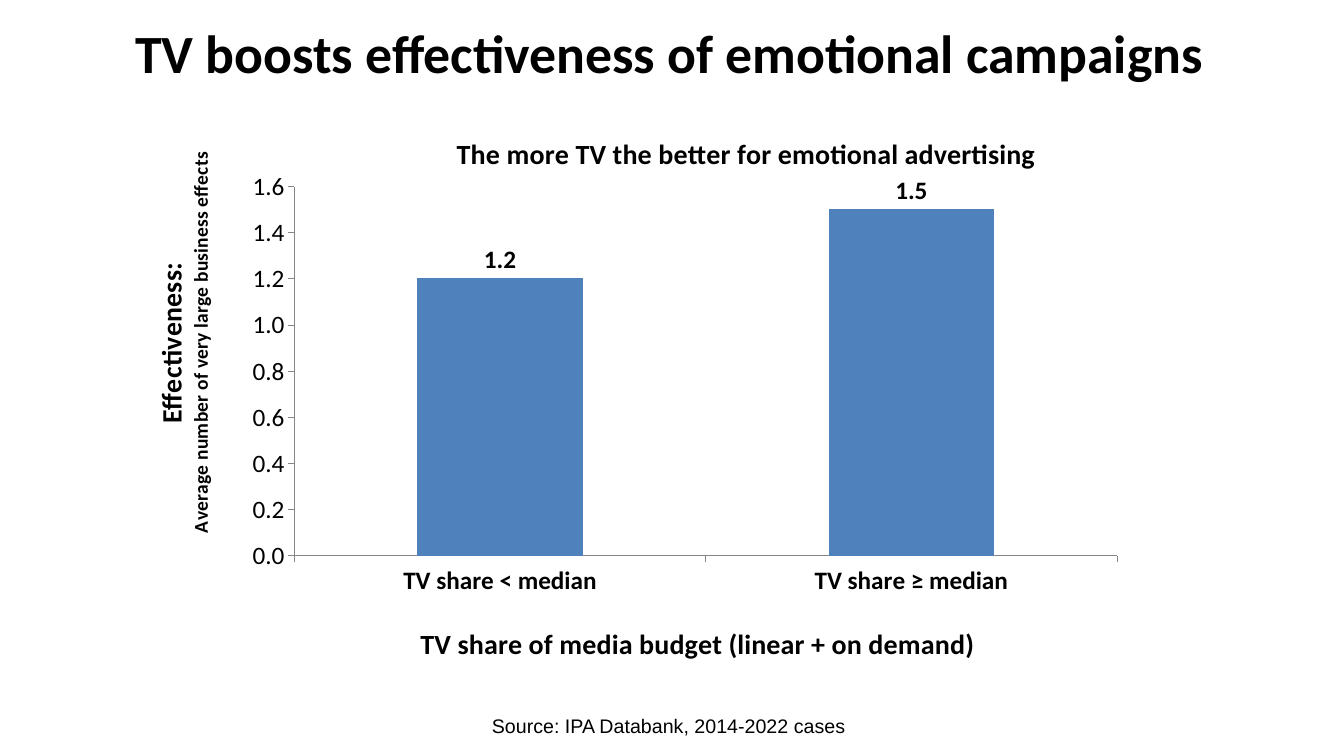
from lxml import etree
from pptx import Presentation, util as u
from pptx.chart.data import CategoryChartData
from pptx.dml.color import RGBColor
from pptx.enum import chart as ch, text as tx
from pptx.oxml.ns import qn


def color(hex_value):
    return RGBColor.from_string(hex_value)


def place(parent, index, **fractions):
    """Give a chart part a manual layout, in fractions of the chart."""
    for old in parent.findall(qn("c:layout")):
        parent.remove(old)
    layout = etree.Element(qn("c:layout"))
    manual = etree.SubElement(layout, qn("c:manualLayout"))
    if "w" in fractions:
        etree.SubElement(manual, qn("c:layoutTarget"), val="inner")
    for key in ("x", "y"):
        etree.SubElement(manual, qn(f"c:{key}Mode"), val="edge")
    for key, value in fractions.items():
        etree.SubElement(manual, qn(f"c:{key}"), val=str(value))
    parent.insert(index, layout)


class Deck:
    ink, bar, axis = "000000", "4F81BD", "868686"
    font = "Calibri"

    def __init__(self):
        self.prs = Presentation()
        self.prs.slide_width, self.prs.slide_height = u.Inches(13.33), u.Inches(7.5)
        self.slide = self.prs.slides.add_slide(self.prs.slide_layouts[6])

    def style(self, font, size, bold=False, name=None):
        font.name, font.size, font.bold = name or self.font, u.Pt(size), bold
        font.color.rgb = color(self.ink)

    def text(self, words, box, size, bold=False, name=None, wrap=True,
             align=tx.PP_ALIGN.LEFT, anchor=tx.MSO_ANCHOR.TOP):
        frame = self.slide.shapes.add_textbox(*map(u.Inches, box)).text_frame
        frame.word_wrap, frame.vertical_anchor = wrap, anchor
        paragraph = frame.paragraphs[0]
        paragraph.text, paragraph.alignment = words, align
        self.style(paragraph.font, size, bold, name)

    def chart_title(self, title, lines, x, y, turned=False):
        frame = title.text_frame
        for i, (words, size) in enumerate(lines):
            paragraph = frame.add_paragraph() if i else frame.paragraphs[0]
            paragraph.text = words
            self.style(paragraph.font, size, True)
        element = title._element
        if turned:
            body = element.find(".//" + qn("a:bodyPr"))
            body.set("rot", "-5400000")
            body.set("vert", "horz")
        place(element, 1, x=x, y=y)

    def columns(self, series_name, values, box, plot_area):
        data = CategoryChartData(number_format="0.0")
        data.categories = list(values)
        data.add_series(series_name, values.values())
        chart = self.slide.shapes.add_chart(
            ch.XL_CHART_TYPE.COLUMN_CLUSTERED, *map(u.Inches, box), data).chart
        self.style(chart.font, 18)
        chart.has_legend = False
        place(chart._chartSpace.find(".//" + qn("c:plotArea")), 0, **plot_area)

        # Columns and their labels
        plot = chart.plots[0]
        plot.gap_width, plot.vary_by_categories = 150, False
        series = plot.series[0]
        series.format.fill.solid()
        series.format.fill.fore_color.rgb = color(self.bar)
        series.format.line.color.rgb = color(self.bar)
        series.format.line.width = u.Pt(0.75)
        labels = series.data_labels
        labels.show_value = True
        labels.position = ch.XL_LABEL_POSITION.OUTSIDE_END
        labels.number_format, labels.number_format_is_linked = "0.0", False
        self.style(labels.font, 18, True)

        # Axes
        for axis, bold in ((chart.category_axis, True), (chart.value_axis, False)):
            axis.has_major_gridlines = False
            axis.major_tick_mark = ch.XL_TICK_MARK.OUTSIDE
            axis.minor_tick_mark = ch.XL_TICK_MARK.NONE
            axis.format.line.color.rgb = color(self.axis)
            axis.format.line.width = u.Pt(0.75)
            self.style(axis.tick_labels.font, 18, bold)
        scale = chart.value_axis
        scale.minimum_scale, scale.maximum_scale, scale.major_unit = 0, 1.6, 0.2
        scale.tick_labels.number_format = "0.0"
        scale.tick_labels.number_format_is_linked = False
        return chart


def main():
    deck = Deck()

    # Headline
    deck.text("TV boosts effectiveness of emotional campaigns", (0.64, 0, 12, 1.03),
              38.4, bold=True, align=tx.PP_ALIGN.CENTER, anchor=tx.MSO_ANCHOR.MIDDLE)

    # Effectiveness by TV share
    effectiveness = deck.columns(
        "Series 1", {"TV share < median": 1.2, "TV share ≥ median": 1.5},
        (0.64, 0.88, 12, 5.77), dict(x=0.19, y=0.17, w=0.68, h=0.64))
    deck.chart_title(effectiveness.chart_title,
                     [("The more TV the better for emotional advertising", 20)], 0.32, 0.07)
    deck.chart_title(effectiveness.category_axis.axis_title,
                     [("TV share of media budget (linear + on demand)", 20)], 0.29, 0.92)
    deck.chart_title(effectiveness.value_axis.axis_title,
                     [("Effectiveness:", 20),
                      ("Average number of very large business effects", 14)],
                     0.07, 0.11, turned=True)

    # Source line
    deck.text("Source: IPA Databank, 2014-2022 cases", (4.78, 7.03, 3.72, 0.34),
              14, name="Arial", wrap=False)

    deck.prs.save("out.pptx")


if __name__ == "__main__":
    main()
